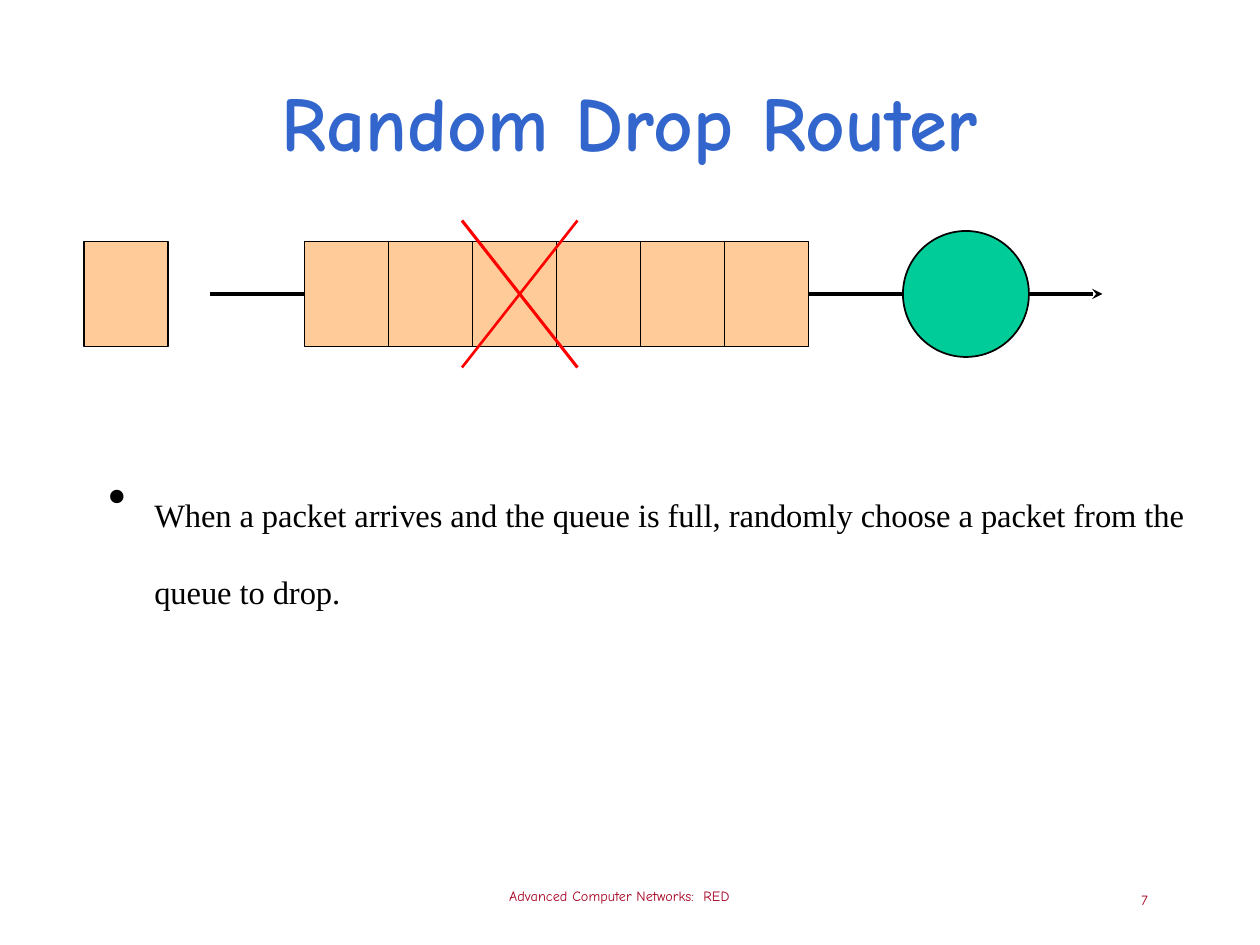
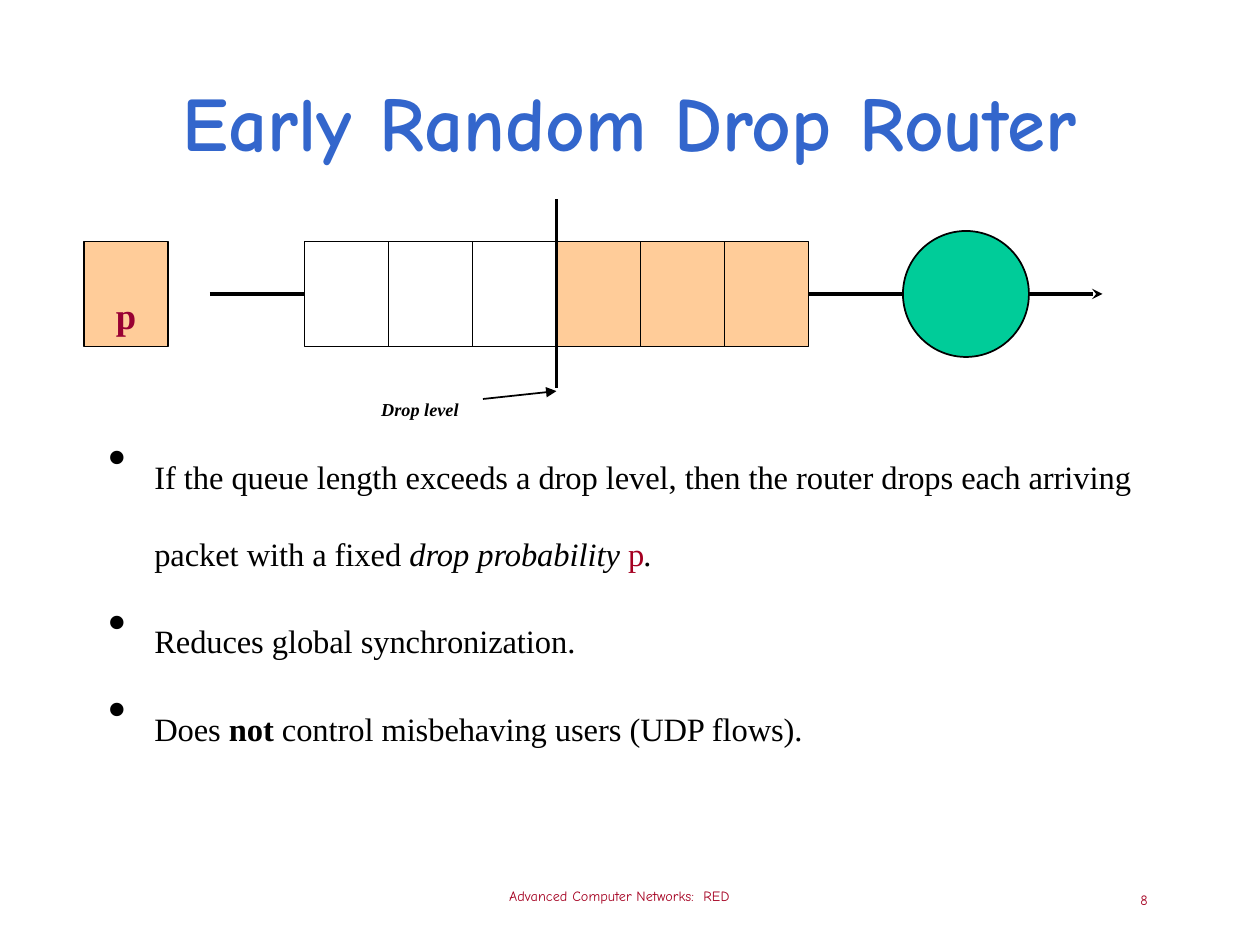
"""Build two slides on random drop and early random drop routers."""
from dataclasses import dataclass
from typing import Optional

from lxml.etree import SubElement
from pptx import Presentation
from pptx.dml.color import RGBColor
from pptx.enum.shapes import MSO_CONNECTOR as Line, MSO_SHAPE as Preset
from pptx.enum.text import MSO_ANCHOR as Anchor, MSO_AUTO_SIZE as AutoSize, PP_ALIGN as Align
from pptx.oxml.ns import qn
from pptx.util import Pt

PX = 9525
TITLE_FONT, BODY_FONT = "Comic Neue", "Times New Roman"
BLACK, WHITE, RED = "000000", "FFFFFF", "FF0000"
TITLE_BLUE, CRIMSON, PACKET_RED = "3366CC", "A50021", "990033"
PACKET, ROUTER = "FFCC99", "00CC99"
CELL_W, CELL_H, CELL_TOP = 64, 80, 184
QUEUE_LEFT, QUEUE_CELLS = 232, 6
ROUTER_LEFT, ROUTER_SIZE = 688, 96
FLOW_Y = CELL_TOP + CELL_H // 2


@dataclass(frozen=True)
class Box:
    left: int
    top: int
    width: int
    height: int

    def emu(self) -> list[int]:
        return [v * PX for v in (self.left, self.top, self.width, self.height)]


@dataclass(frozen=True)
class Style:
    size: int
    color: str = BLACK
    font: str = BODY_FONT
    bold: bool = False
    italic: bool = False
    lowered: bool = True


@dataclass(frozen=True)
class Page:
    number: int
    title: str
    body: Box
    bullets: list[list[tuple[str, Style]]]
    empty_cells: int = 0
    packet_label: str = ""


TITLE_STYLE = Style(44, TITLE_BLUE, TITLE_FONT, bold=True, lowered=False)
FOOTER_STYLE = Style(14, CRIMSON, TITLE_FONT)
BODY = Style(32)
PACKET_STYLE = Style(36, PACKET_RED, bold=True)
LEVEL_STYLE = Style(18, bold=True, italic=True)

PAGES = [
    Page(7, "Random Drop Router", Box(72, 344, 856, 248), [
        [("When a packet arrives and the queue is full, randomly choose "
          "a packet from the queue to drop.", BODY)],
    ]),
    Page(8, "Early Random Drop Router", Box(72, 315, 856, 312), [
        [("If the queue length exceeds a drop level, then the router drops "
          "each arriving packet with a fixed ", BODY),
         ("drop probability ", Style(32, italic=True)),
         ("p", Style(32, CRIMSON)),
         (".", Style(32, italic=True))],
        [("Reduces global synchronization.", BODY)],
        [("Does ", BODY), ("not ", Style(32, bold=True)),
         ("control misbehaving users (UDP flows).", BODY)],
    ], empty_cells=3, packet_label="p"),
]


def rgb(color: str) -> RGBColor:
    return RGBColor.from_string(color)


def format_run(run, style: Style) -> None:
    font = run.font
    font.size, font.name = Pt(style.size), style.font
    font.bold, font.italic = style.bold, style.italic
    font.color.rgb = rgb(style.color)
    if style.lowered:
        run._r.get_or_add_rPr().set("baseline", "-25000")


def write(shape, text: str, style: Style, align: Align, wrap: bool = False) -> None:
    frame = shape.text_frame
    frame.text = text
    frame.word_wrap, frame.auto_size = wrap, AutoSize.NONE
    frame.vertical_anchor = Anchor.MIDDLE
    frame.paragraphs[0].alignment = align
    format_run(frame.paragraphs[0].runs[0], style)


def place(shape, box: Box) -> None:
    shape.left, shape.top, shape.width, shape.height = box.emu()


def add_form(slide, preset: Preset, box: Box, fill: str, outlined: bool = True):
    form = slide.shapes.add_shape(preset, *box.emu())
    form.shadow.inherit = False
    form.fill.solid()
    form.fill.fore_color.rgb = rgb(fill)
    if outlined:
        form.line.color.rgb, form.line.width = rgb(BLACK), Pt(1)
    else:
        form.line.fill.background()
    return form


def add_line(slide, start: tuple[int, int], end: tuple[int, int], width: float = 1.75,
             color: str = BLACK, arrow: Optional[str] = None):
    line = slide.shapes.add_connector(Line.STRAIGHT, *(v * PX for v in start + end))
    line.line.color.rgb, line.line.width = rgb(color), Pt(width)
    if arrow:
        SubElement(line.line._get_or_add_ln(), qn("a:tailEnd"), type=arrow)
    SubElement(line._element.spPr, qn("a:effectLst"))
    return line


def add_bullets(body, page: Page) -> None:
    place(body, page.body)
    frame = body.text_frame
    frame.auto_size, frame.word_wrap = AutoSize.NONE, True
    for index, parts in enumerate(page.bullets):
        paragraph = frame.add_paragraph() if index else frame.paragraphs[0]
        paragraph.space_before = Pt(6.4 if index else 0)
        props = paragraph._p.get_or_add_pPr()
        props.set("marL", str(36 * PX))
        props.set("indent", str(-36 * PX))
        SubElement(props, qn("a:buFont"), typeface=BODY_FONT)
        SubElement(props, qn("a:buChar"), char="•")
        for text, style in parts:
            run = paragraph.add_run()
            run.text = text
            format_run(run, style)


def add_footer(slide, number: int) -> None:
    course = slide.shapes.add_textbox(*Box(300, 656, 344, 40).emu())
    write(course, "Advanced Computer Networks:  RED", FOOTER_STYLE, Align.CENTER)
    page_number = slide.shapes.add_textbox(*Box(684, 655, 200, 48).emu())
    write(page_number, str(number), FOOTER_STYLE, Align.RIGHT)


def add_router(slide, page: Page) -> None:
    cells = [
        add_form(slide, Preset.RECTANGLE,
                 Box(QUEUE_LEFT + i * CELL_W, CELL_TOP, CELL_W, CELL_H),
                 WHITE if i < page.empty_cells else PACKET)
        for i in range(QUEUE_CELLS)
    ]
    queue_right = QUEUE_LEFT + QUEUE_CELLS * CELL_W
    router_right = ROUTER_LEFT + ROUTER_SIZE
    add_form(slide, Preset.OVAL,
             Box(ROUTER_LEFT, FLOW_Y - ROUTER_SIZE // 2, ROUTER_SIZE, ROUTER_SIZE), ROUTER)
    outflow = add_line(slide, (queue_right, FLOW_Y), (ROUTER_LEFT, FLOW_Y))
    outflow.begin_connect(cells[-1], 3)
    inflow = add_line(slide, (160, FLOW_Y), (QUEUE_LEFT, FLOW_Y))
    inflow.end_connect(cells[0], 1)
    add_line(slide, (router_right, FLOW_Y), (840, FLOW_Y), 2, arrow="stealth")
    arrival = add_form(slide, Preset.RECTANGLE, Box(64, CELL_TOP, CELL_W, CELL_H), PACKET)
    if page.packet_label:
        write(arrival, page.packet_label, PACKET_STYLE, Align.CENTER)


def add_drop_cross(slide) -> None:
    add_line(slide, (440, 168), (352, 280), 1.5, RED)
    add_line(slide, (352, 168), (440, 280), 1.75, RED)


def add_drop_level(slide, empty_cells: int) -> None:
    level_x = QUEUE_LEFT + empty_cells * CELL_W
    add_line(slide, (level_x, 152), (level_x, 296))
    caption = add_form(slide, Preset.RECTANGLE, Box(272, 288, 96, 32), WHITE, outlined=False)
    write(caption, "Drop level", LEVEL_STYLE, Align.CENTER)
    pointer = add_line(slide, (368, 304), (level_x, 298), 1, arrow="triangle")
    pointer.begin_connect(caption, 3)


def add_page(deck, page: Page) -> None:
    slide = deck.slides.add_slide(deck.slide_layouts[1])
    title, body = slide.placeholders
    place(title, Box(72, 40, 816, 104))
    write(title, page.title, TITLE_STYLE, Align.CENTER, wrap=True)
    add_bullets(body, page)
    add_footer(slide, page.number)
    add_router(slide, page)
    if page.empty_cells:
        add_drop_level(slide, page.empty_cells)
    else:
        add_drop_cross(slide)


def main() -> None:
    deck = Presentation()
    deck.slide_width, deck.slide_height = 960 * PX, 720 * PX
    for page in PAGES:
        add_page(deck, page)
    deck.save("out.pptx")


if __name__ == "__main__":
    main()
